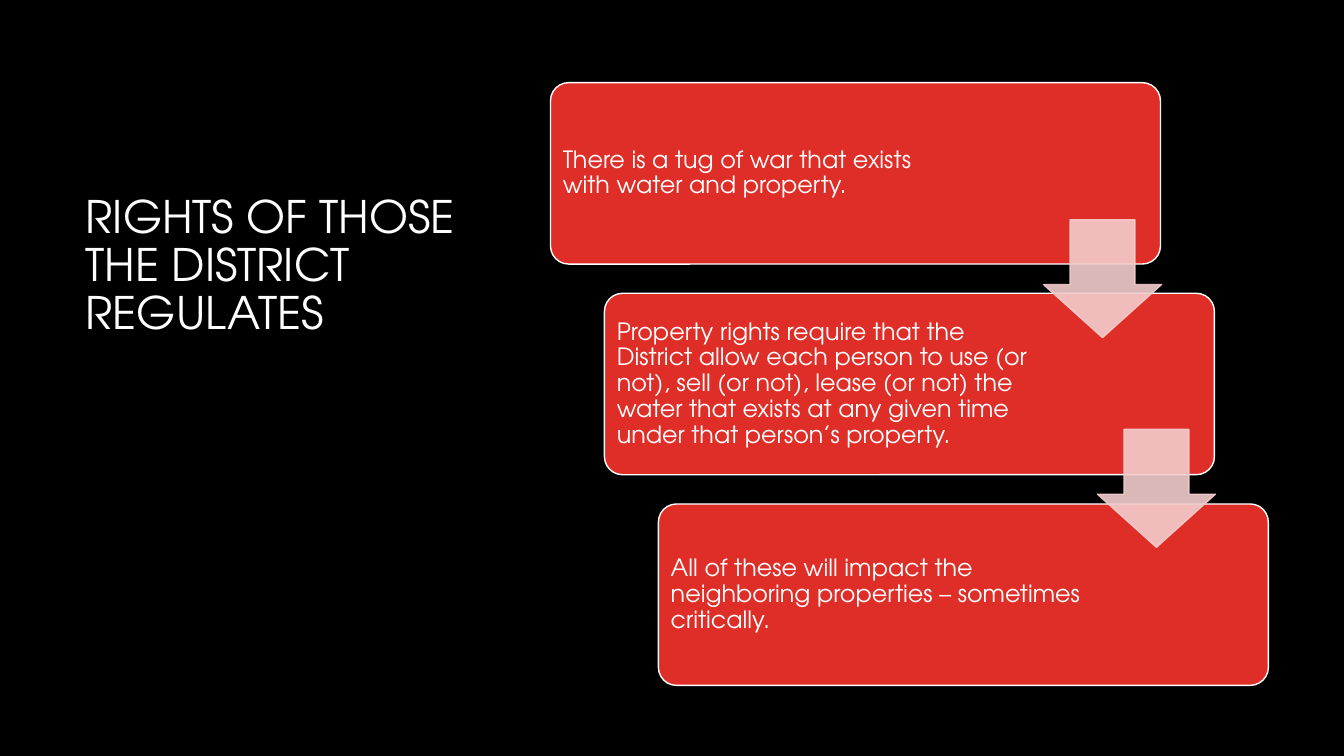
from pptx import Presentation
from pptx.dml.color import RGBColor
from pptx.enum.shapes import MSO_SHAPE
from pptx.enum.text import MSO_ANCHOR, PP_ALIGN
from pptx.oxml.ns import qn
from pptx.util import Inches, Pt
from lxml import etree

ROUNDED = MSO_SHAPE.ROUNDED_RECTANGLE
DOWN_ARROW = MSO_SHAPE.DOWN_ARROW
MIDDLE, BOTTOM = MSO_ANCHOR.MIDDLE, MSO_ANCHOR.BOTTOM
LEFT = PP_ALIGN.LEFT

COLORS = {"background": "000000", "text": "FFFFFF", "card": "DF2E28", "arrow": "F3CDCD"}
FONT = "TeX Gyre Adventor"


def rgb(name):
    return RGBColor.from_string(COLORS[name])


def write(frame, text, size, anchor):
    frame.word_wrap = True
    frame.vertical_anchor = anchor
    paragraph = frame.paragraphs[0]
    paragraph.alignment = LEFT
    paragraph.line_spacing = 0.9
    run = paragraph.add_run()
    run.text = text
    run.font.name = FONT
    run.font.size = Pt(size)
    run.font.color.rgb = rgb("text")


presentation = Presentation()
presentation.slide_width = Inches(13.33)
presentation.slide_height = Inches(7.5)
slide = presentation.slides.add_slide(presentation.slide_layouts[5])
slide.background.fill.solid()
slide.background.fill.fore_color.rgb = rgb("background")

heading = slide.shapes.title
heading.left, heading.top = Inches(0.75), Inches(1.67)
heading.width, heading.height = Inches(4.5), Inches(1.75)
write(heading.text_frame, "RIGHTS OF THOSE THE DISTRICT REGULATES", size=32, anchor=BOTTOM)

steps = [
    ("There is a tug of war that exists with water and property.", 1.95),
    ("Property rights require that the District allow each person to use (or not), "
     "sell (or not), lease (or not) the water that exists at any given time under "
     "that person’s property.", 1.75),
    ("All of these will impact the neighboring properties – sometimes critically.", 1.75),
]
STEP_RIGHT = 0.535

for index, (statement, right_inset) in enumerate(steps):
    card = slide.shapes.add_shape(
        ROUNDED, Inches(5.46 + STEP_RIGHT * index), Inches(0.82 + 2.09 * index),
        Inches(6.05), Inches(1.8))
    card.adjustments[0] = 0.1
    card.shadow.inherit = False
    card.fill.solid()
    card.fill.fore_color.rgb = rgb("card")
    card.line.color.rgb = rgb("text")
    card.line.width = Pt(1)
    frame = card.text_frame
    frame.margin_left = frame.margin_top = frame.margin_bottom = Inches(0.07)
    frame.margin_right = Inches(right_inset)
    write(frame, statement, size=17, anchor=MIDDLE)

for index in range(len(steps) - 1):
    arrow = slide.shapes.add_shape(
        DOWN_ARROW, Inches(10.35 + STEP_RIGHT * index), Inches(2.18 + 2.08 * index),
        Inches(1.17), Inches(1.17))
    arrow.adjustments[0] = 0.55
    arrow.adjustments[1] = 0.45
    arrow.shadow.inherit = False
    arrow.fill.solid()
    arrow.fill.fore_color.rgb = rgb("arrow")
    arrow.line.color.rgb = rgb("arrow")
    arrow.line.width = Pt(1)
    for color in arrow.element.spPr.iter(qn("a:srgbClr")):
        etree.SubElement(color, qn("a:alpha"), val="90000")

presentation.save("out.pptx")
